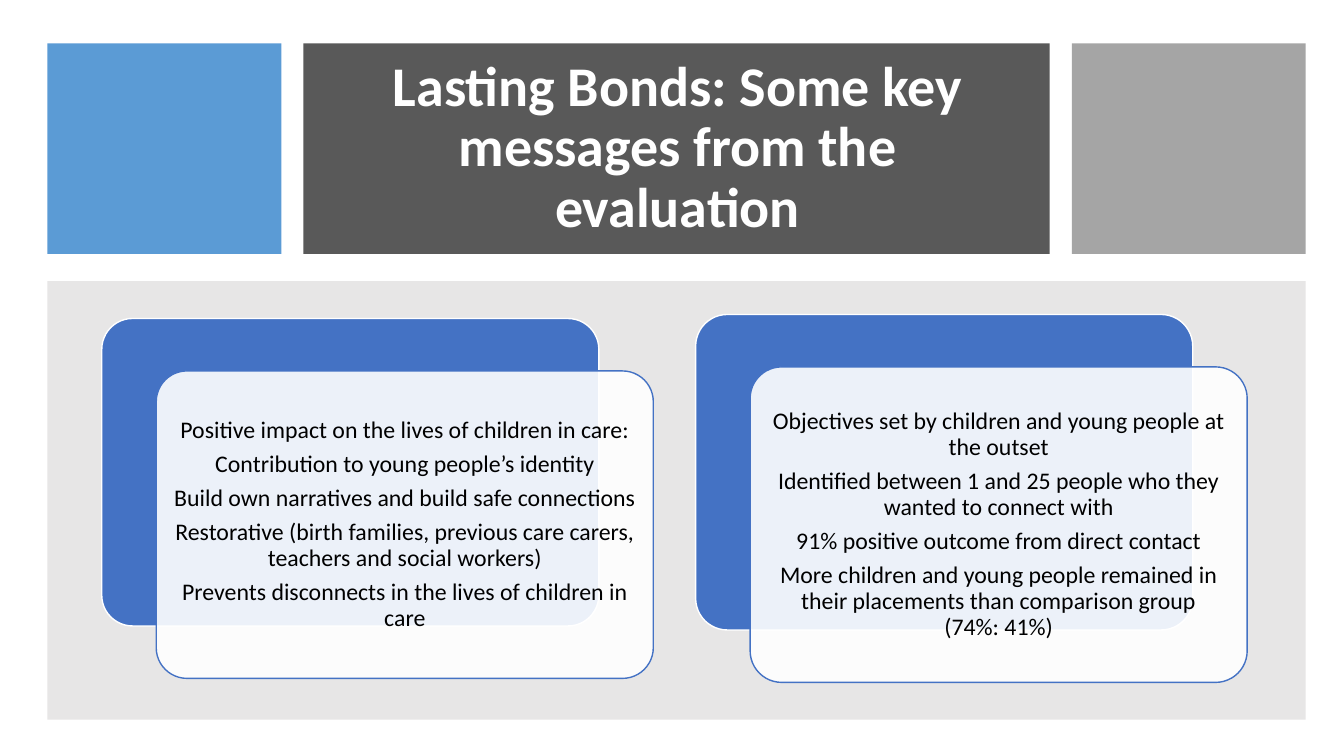
from pptx import Presentation
from pptx.dml.color import RGBColor
from pptx.enum.shapes import MSO_SHAPE
from pptx.enum.text import MSO_ANCHOR, PP_ALIGN
from pptx.oxml.ns import qn
from pptx.util import Emu, Pt
from lxml import etree

RECTANGLE = MSO_SHAPE.RECTANGLE
ROUNDED = MSO_SHAPE.ROUNDED_RECTANGLE
MIDDLE = MSO_ANCHOR.MIDDLE
CENTER = PP_ALIGN.CENTER

EMU_PER_PX = 9144  # 100 px to the inch
FONT = "Calibri"
WHITE, BLACK = "FFFFFF", "000000"
DARK, SKY, GRAY, PALE, BLUE = "595959", "5B9BD5", "A5A5A5", "E7E6E6", "4472C4"

TITLE = "Lasting Bonds: Some key messages from the evaluation"
IMPACT = [
    "Positive impact on the lives of children in care:",
    "Contribution to young people’s identity",
    "Build own narratives and build safe connections",
    "Restorative (birth families, previous care carers, teachers and social workers)",
    "Prevents disconnects in the lives of children in care",
]
OUTCOMES = [
    "Objectives set by children and young people at the outset",
    "Identified between 1 and 25 people who they wanted to connect with",
    "91% positive outcome from direct contact",
    "More children and young people remained in their placements "
    "than comparison group\v(74%: 41%)",
]


def px(length):
    return Emu(length * EMU_PER_PX)


def color(hex_string):
    return RGBColor.from_string(hex_string)


def add_block(slide, kind, box, fill, line=None, opacity=100):
    shape = slide.shapes.add_shape(kind, *map(px, box))
    shape.shadow.inherit = False
    shape.fill.solid()
    shape.fill.fore_color.rgb = color(fill)
    if opacity < 100:
        fill_color = shape.fill._xPr.find(qn("a:solidFill"))[0]
        etree.SubElement(fill_color, qn("a:alpha"), val=str(opacity * 1000))
    if line:
        shape.line.color.rgb = color(line)
        shape.line.width = Pt(1)
    else:
        shape.line.fill.background()
    if kind == ROUNDED:
        shape.adjustments[0] = 0.1
    return shape


def add_text(slide, box, lines, size, font_color, bold=False, inset=10, space_after=0):
    frame = slide.shapes.add_textbox(*map(px, box)).text_frame
    frame.word_wrap = True
    frame.vertical_anchor = MIDDLE
    frame.margin_left = frame.margin_right = px(inset)
    frame.margin_top = frame.margin_bottom = px(inset)
    for index, line in enumerate(lines):
        paragraph = frame.add_paragraph() if index else frame.paragraphs[0]
        paragraph.text = line
        paragraph.alignment = CENTER
        paragraph.line_spacing = 0.9
        paragraph.space_after = Pt(space_after)
        for run in paragraph.runs:
            run.font.name = FONT
            run.font.size = Pt(size)
            run.font.bold = bold
            run.font.color.rgb = color(font_color)


def add_header(slide, box):
    left, top, width, height = box
    side, gap = 232, 22
    middle = width - 2 * (side + gap)
    middle_left = left + side + gap
    add_block(slide, RECTANGLE, (middle_left, top, middle, height), DARK)
    add_block(slide, RECTANGLE, (left, top, side, height), SKY)
    add_block(slide, RECTANGLE, (left + width - side, top, side, height), GRAY)
    add_text(slide, (middle_left + 18, top + 32, 706, height - 64), [TITLE],
             40, WHITE, bold=True)


def add_card(slide, box, lines):
    """Place a blue plate with a translucent text card offset over it."""
    left, top, width, height = box
    shift_x, shift_y, padding = 54, 52, 9
    card_left, card_top = left + shift_x, top + shift_y
    add_block(slide, ROUNDED, box, BLUE, WHITE)
    add_block(slide, ROUNDED, (card_left, card_top, width, height), WHITE, BLUE, opacity=90)
    add_text(slide, (card_left + padding, card_top + padding,
                     width - 2 * padding, height - 2 * padding),
             lines, 17, BLACK, inset=7, space_after=6)


def add_messages(slide, box):
    left, top, width, height = box
    add_block(slide, RECTANGLE, box, PALE)
    card_width, pitch = 493, 589
    for column, (lines, card_height) in enumerate([(IMPACT, 305), (OUTCOMES, 313)]):
        card_top = top + (height - card_height - 52) // 2 - 2
        add_card(slide, (left + 54 + column * pitch, card_top, card_width, card_height), lines)


def main():
    presentation = Presentation()
    presentation.slide_width, presentation.slide_height = px(1333), px(750)
    slide = presentation.slides.add_slide(presentation.slide_layouts[6])
    add_header(slide, (47, 43, 1248, 209))
    add_messages(slide, (47, 279, 1248, 435))
    presentation.save("out.pptx")


if __name__ == "__main__":
    main()
